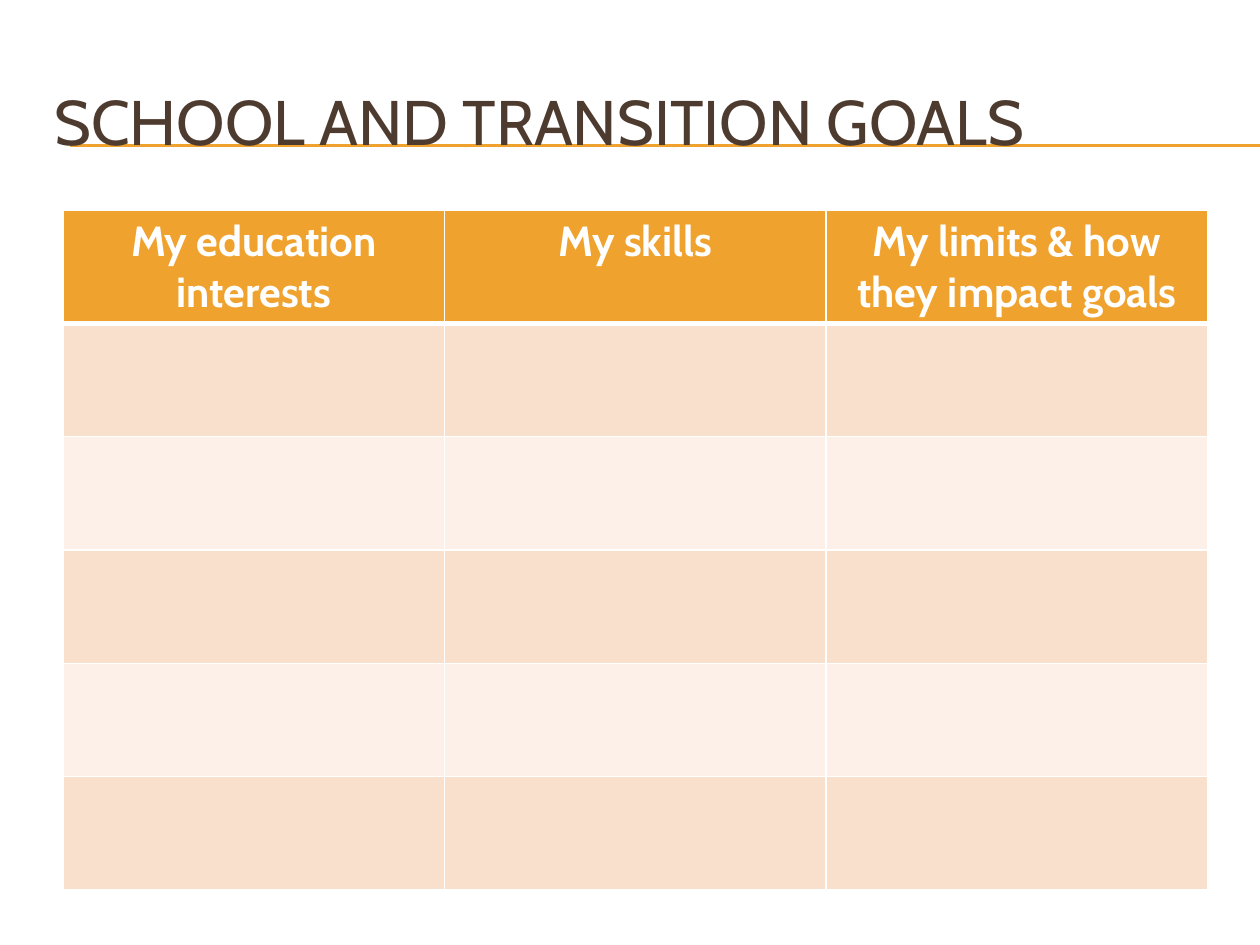
"""Build the slide with the school and transition goals worksheet table."""
from dataclasses import dataclass

from lxml import etree
from pptx import Presentation
from pptx.dml.color import RGBColor
from pptx.enum.shapes import MSO_CONNECTOR
from pptx.enum.text import MSO_ANCHOR, PP_ALIGN
from pptx.oxml.ns import qn
from pptx.util import Pt

STRAIGHT = MSO_CONNECTOR.STRAIGHT
LEFT, CENTER = PP_ALIGN.LEFT, PP_ALIGN.CENTER
TOP, MIDDLE = MSO_ANCHOR.TOP, MSO_ANCHOR.MIDDLE

ORANGE = RGBColor(0xF0, 0xA2, 0x2E)
BROWN = RGBColor(0x4E, 0x3B, 0x30)
PEACH = RGBColor(0xF9, 0xE0, 0xCD)
CREAM = RGBColor(0xFC, 0xF0, 0xE8)
WHITE = RGBColor(0xFF, 0xFF, 0xFF)
FONT = "Cabin"

SLIDE_WIDTH, SLIDE_HEIGHT = 720, 540
HEADINGS = ("My education interests", "My skills", "My limits & how they impact goals")
ROW_COUNT = 6
HEADER_RULE, GRID_RULE = 3, 1


@dataclass(frozen=True)
class Box:
    """A rectangle in points."""
    left: float
    top: float
    width: float
    height: float


@dataclass(frozen=True)
class Rule:
    """A horizontal line in points."""
    left: float
    right: float
    y: float


TITLE_BOX = Box(24, 36, 684, 66)
GOALS_BOX = Box(36, 120, 654, 388.5)
TITLE_RULES = (Rule(40, SLIDE_WIDTH, 82.8), Rule(40, SLIDE_WIDTH, 83.4))


def write(frame, text: str, *, size: float, color: RGBColor, bold: bool = False,
          align=LEFT, anchor=TOP) -> None:
    """Put one formatted paragraph in a text frame."""
    frame.word_wrap = True
    frame.vertical_anchor = anchor
    paragraph = frame.paragraphs[0]
    paragraph.alignment = align
    run = paragraph.add_run()
    run.text = text
    run.font.name = FONT
    run.font.size = Pt(size)
    run.font.bold = bold
    run.font.color.rgb = color


def draw_rule(slide, rule: Rule) -> None:
    """Draw one thin orange line without a shadow."""
    line = slide.shapes.add_connector(
        STRAIGHT, Pt(rule.left), Pt(rule.y), Pt(rule.right), Pt(rule.y))
    line.line.color.rgb = ORANGE
    line.line.width = Pt(0.75)
    etree.SubElement(line._element.spPr, qn("a:effectLst"))


def set_borders(cell, *, top: float, bottom: float) -> None:
    """Give a cell white borders, with widths in points."""
    properties = cell._tc.get_or_add_tcPr()
    widths = {"a:lnL": GRID_RULE, "a:lnR": GRID_RULE, "a:lnT": top, "a:lnB": bottom}
    for tag, width in widths.items():
        border = etree.SubElement(properties, qn(tag), w=str(int(Pt(width))))
        fill = etree.SubElement(border, qn("a:solidFill"))
        etree.SubElement(fill, qn("a:srgbClr"), val=str(WHITE))


def draw_goals(slide, box: Box) -> None:
    """Draw the table with its headings and empty banded rows."""
    goals = slide.shapes.add_table(
        ROW_COUNT, len(HEADINGS), Pt(box.left), Pt(box.top),
        Pt(box.width), Pt(box.height)).table
    for row_index, row in enumerate(goals.rows):
        row.height = Pt(box.height / ROW_COUNT)
        band = ORANGE if row_index == 0 else PEACH if row_index % 2 else CREAM
        for cell in row.cells:
            set_borders(cell,
                        top=HEADER_RULE if row_index == 1 else GRID_RULE,
                        bottom=HEADER_RULE if row_index == 0 else GRID_RULE)
            cell.fill.solid()
            cell.fill.fore_color.rgb = band
    for cell, heading in zip(goals.rows[0].cells, HEADINGS):
        write(cell.text_frame, heading, size=24, color=WHITE, bold=True, align=CENTER)


def draw_title(slide, box: Box) -> None:
    """Draw the slide title."""
    title = slide.shapes.add_textbox(
        Pt(box.left), Pt(box.top), Pt(box.width), Pt(box.height))
    write(title.text_frame, "SCHOOL AND TRANSITION GOALS",
          size=36, color=BROWN, anchor=MIDDLE)


def main() -> None:
    """Build and save the presentation."""
    presentation = Presentation()
    presentation.slide_width = Pt(SLIDE_WIDTH)
    presentation.slide_height = Pt(SLIDE_HEIGHT)
    slide = presentation.slides.add_slide(presentation.slide_layouts[6])
    for rule in TITLE_RULES:
        draw_rule(slide, rule)
    draw_title(slide, TITLE_BOX)
    draw_goals(slide, GOALS_BOX)
    presentation.save("out.pptx")


if __name__ == "__main__":
    main()
